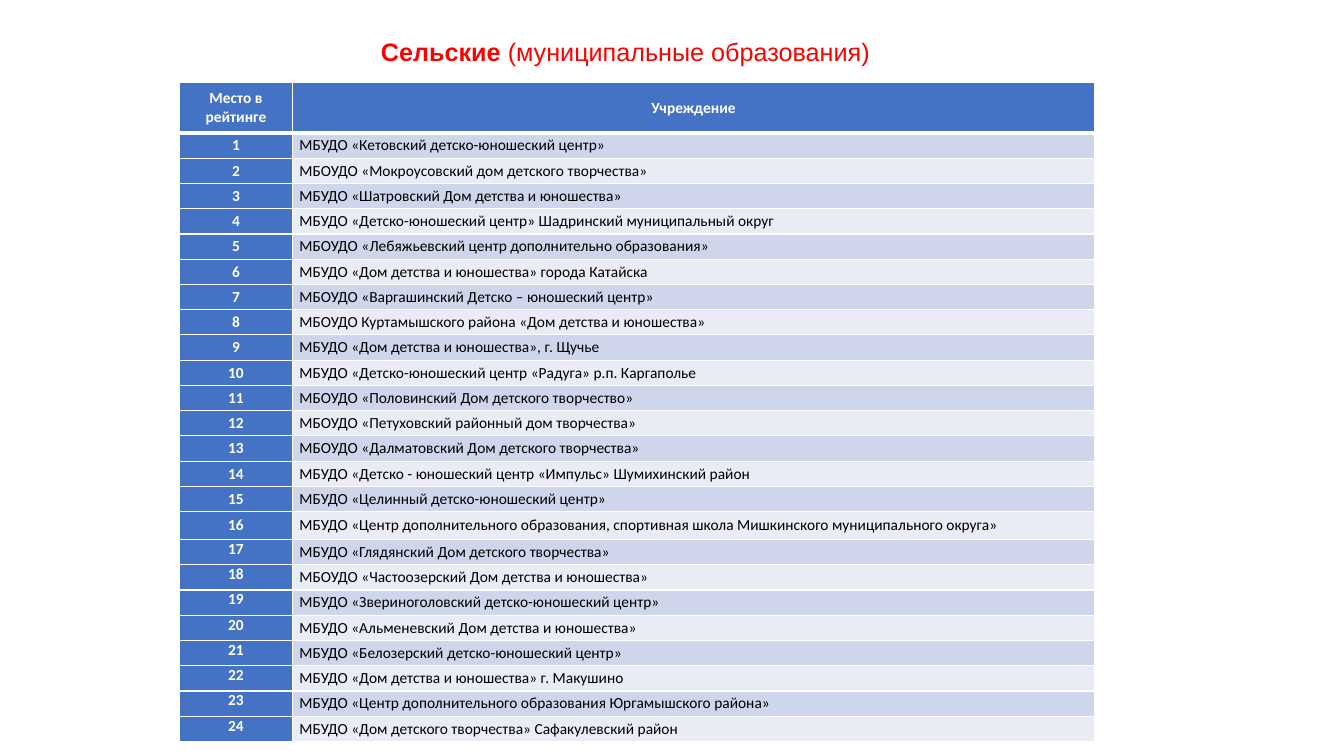
from lxml import etree
from pptx import Presentation
from pptx.dml.color import RGBColor
from pptx.enum import text as t
from pptx.oxml.ns import qn
from pptx.util import Pt

HUES = {"head": "4472C4", "odd": "CFD5EA", "even": "E9EBF5",
        "white": "FFFFFF", "black": "000000", "red": "FF0000"}

CENTERS = [
    "МБУДО «Кетовский детско-юношеский центр»",
    "МБОУДО «Мокроусовский дом детского творчества»",
    "МБУДО «Шатровский Дом детства и юношества»",
    "МБУДО «Детско-юношеский центр» Шадринский муниципальный округ",
    "МБОУДО «Лебяжьевский центр дополнительно образования»",
    "МБУДО «Дом детства и юношества» города Катайска",
    "МБОУДО «Варгашинский Детско – юношеский центр»",
    "МБОУДО Куртамышского района «Дом детства и юношества»",
    "МБУДО «Дом детства и юношества», г. Щучье",
    "МБУДО «Детско-юношеский центр «Радуга» р.п. Каргаполье",
    "МБОУДО «Половинский Дом детского творчество»",
    "МБОУДО «Петуховский районный дом творчества»",
    "МБОУДО «Далматовский Дом детского творчества»",
    "МБУДО «Детско - юношеский центр «Импульс» Шумихинский район",
    "МБУДО «Целинный детско-юношеский центр»",
    "МБУДО «Центр дополнительного образования, спортивная школа "
    "Мишкинского муниципального округа»",
    "МБУДО «Глядянский Дом детского творчества»",
    "МБОУДО «Частоозерский Дом детства и юношества»",
    "МБУДО «Звериноголовский детско-юношеский центр»",
    "МБУДО «Альменевский Дом детства и юношества»",
    "МБУДО «Белозерский детско-юношеский центр»",
    "МБУДО «Дом детства и юношества» г. Макушино",
    "МБУДО «Центр дополнительного образования Юргамышского района»",
    "МБУДО «Дом детского творчества» Сафакулевский район",
]


class Board:
    """Draws the title and the rating table on one slide."""

    def __init__(self, slide):
        self.slide = slide

    def font(self, run, name, size, hue, bold):
        font = run.font
        font.name, font.size, font.bold = name, Pt(size), bold
        font.color.rgb = RGBColor.from_string(HUES[hue])

    def title(self, x, y, w, h, parts):
        frame = self.slide.shapes.add_textbox(Pt(x), Pt(y), Pt(w), Pt(h)).text_frame
        frame.word_wrap = False
        frame.auto_size = t.MSO_AUTO_SIZE.SHAPE_TO_FIT_TEXT
        for words, bold in parts:
            run = frame.paragraphs[0].add_run()
            run.text = words
            self.font(run, "Arial", 18, "red", bold)

    def edge(self, cell, side, width):
        props = cell._tc.get_or_add_tcPr()
        line = etree.SubElement(props, qn(f"a:ln{side}"), w=str(Pt(width)))
        fill = etree.SubElement(line, qn("a:solidFill"))
        etree.SubElement(fill, qn("a:srgbClr"), val=HUES["white"])

    def cell(self, cell, words, fill, hue, align, top=1, base=1, anchor=t.MSO_ANCHOR.MIDDLE):
        for side, width in zip("LRTB", (1, 1, top, base)):
            self.edge(cell, side, width)
        cell.fill.solid()
        cell.fill.fore_color.rgb = RGBColor.from_string(HUES[fill])
        cell.margin_left = cell.margin_right = Pt(5)
        cell.margin_top = cell.margin_bottom = 0
        cell.vertical_anchor = anchor
        cell.text_frame.text = words
        para = cell.text_frame.paragraphs[0]
        para.alignment = align
        self.font(para.runs[0], "Calibri", 11, hue, hue == "white")

    def table(self, x, y, cols, heights, heads, names):
        grid = self.slide.shapes.add_table(
            len(heights), len(cols), Pt(x), Pt(y), Pt(sum(cols)), Pt(sum(heights))).table
        for col, width in zip(grid.columns, cols):
            col.width = Pt(width)
        for row, height in zip(grid.rows, heights):
            row.height = Pt(height)
        mid = t.PP_ALIGN.CENTER
        for i, head in enumerate(heads):
            self.cell(grid.cell(0, i), head, "head", "white", mid, base=3)
        for place, name in enumerate(names, 1):
            top = 3 if place == 1 else 1
            anchor = t.MSO_ANCHOR.TOP if place > 16 else t.MSO_ANCHOR.MIDDLE
            align = t.PP_ALIGN.JUSTIFY if place > 22 else t.PP_ALIGN.LEFT
            band = "odd" if place % 2 else "even"
            self.cell(grid.cell(place, 0), str(place), "head", "white", mid, top, anchor=anchor)
            self.cell(grid.cell(place, 1), name, band, "black", align, top)


def main():
    deck = Presentation()
    deck.slide_width, deck.slide_height = Pt(960), Pt(540)
    board = Board(deck.slides.add_slide(deck.slide_layouts[6]))
    heights = [36] + [20 if place == 16 else 18.04 for place in range(1, len(CENTERS) + 1)]
    board.table(128.3, 59, (80.6, 573), heights, ("Место в рейтинге", "Учреждение"), CENTERS)
    board.title(265, 22.5, 367, 29, (("Сельские", True), (" (муниципальные образования)", False)))
    deck.save("out.pptx")


if __name__ == "__main__":
    main()
